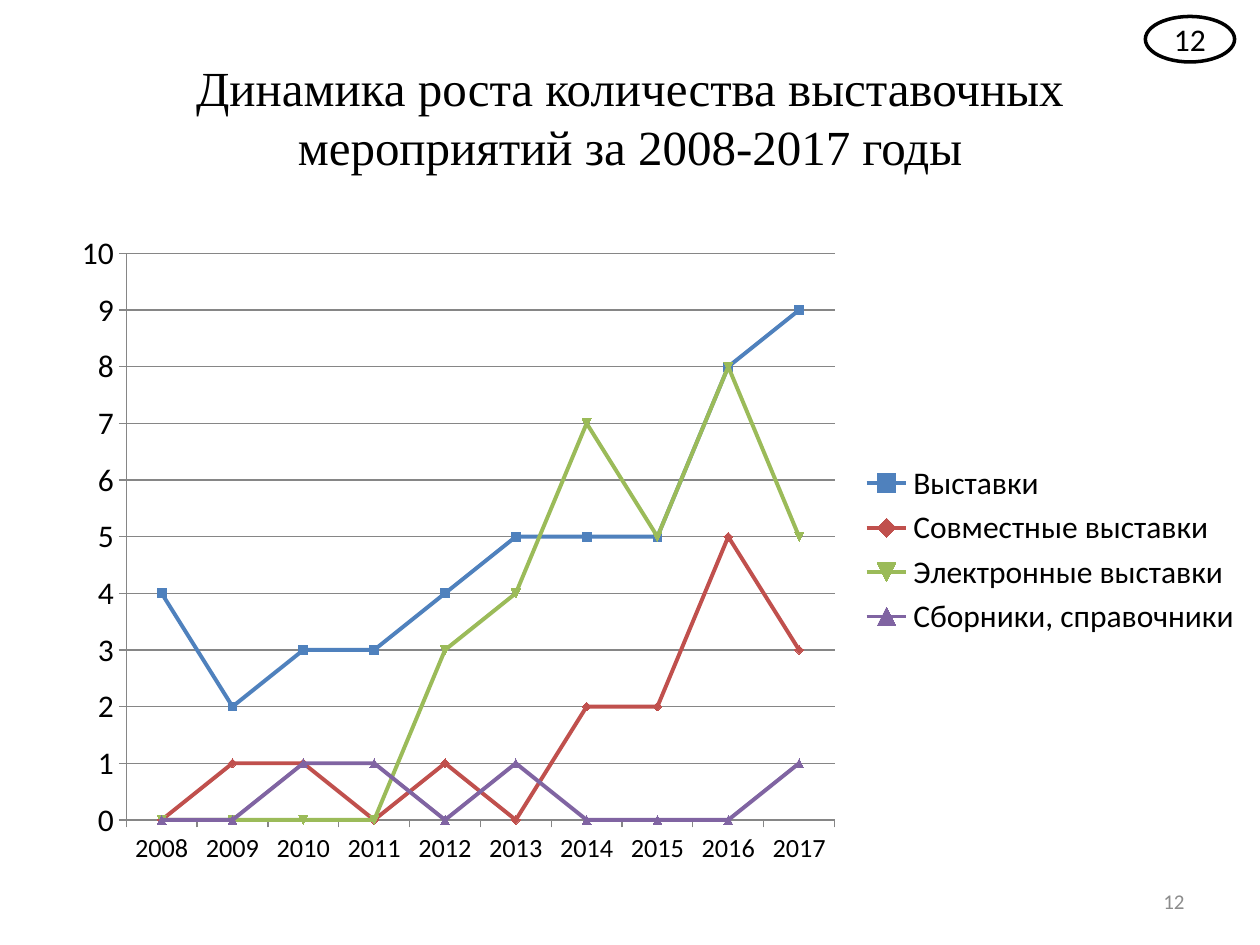
from lxml import etree
from pptx import Presentation
from pptx.chart.data import CategoryChartData
from pptx.dml.color import RGBColor
from pptx.enum.chart import XL_CHART_TYPE, XL_LEGEND_POSITION, XL_TICK_MARK
from pptx.enum.shapes import MSO_SHAPE
from pptx.enum.text import MSO_ANCHOR, PP_ALIGN
from pptx.oxml.ns import qn
from pptx.util import Pt

LINES = XL_CHART_TYPE.LINE_MARKERS
RIGHT_KEY = XL_LEGEND_POSITION.RIGHT
TICK_OUT = XL_TICK_MARK.OUTSIDE
OVAL = MSO_SHAPE.OVAL
MIDDLE = MSO_ANCHOR.MIDDLE
CENTER, RIGHT = PP_ALIGN.CENTER, PP_ALIGN.RIGHT

TITLE = "Динамика роста количества выставочных мероприятий за 2008-2017 годы"
PAGE = "12"
YEARS = [str(year) for year in range(2008, 2018)]
SERIES = [
    ("Выставки", (4, 2, 3, 3, 4, 5, 5, 5, 8, 9), "4F81BD"),
    ("Совместные выставки", (0, 1, 1, 0, 1, 0, 2, 2, 5, 3), "C0504D"),
    ("Электронные выставки", (0, 0, 0, 0, 3, 4, 7, 5, 8, 5), "9BBB59"),
    ("Сборники, справочники", (0, 0, 1, 1, 0, 1, 0, 0, 0, 1), "8064A2"),
]
BOXES = {
    "title": (36, 21.6, 648, 90),
    "chart": (31, 126, 686, 376.5),
    "page": (516, 500.5, 168, 28.8),
    "badge": (654.5, 9.4, 51, 26),
}
PLOT = {"x": 0.06, "y": 0.05, "w": 0.59, "h": 0.86}
THEME = {
    "head": "Times New Roman", "body": "Calibri",
    "ink": "000000", "paper": "FFFFFF", "gray": "8C8C8C", "axis": "868686",
    "big": 28, "text": 18, "year": 15, "small": 12,
}


def color(name):
    return RGBColor.from_string(THEME.get(name, name))


def place(name):
    return [Pt(side) for side in BOXES[name]]


def write(shape, text, size="text", face="body", ink="ink", align=CENTER):
    frame = shape.text_frame
    frame.word_wrap = True
    frame.vertical_anchor = MIDDLE
    part = frame.paragraphs[0]
    part.alignment = align
    run = part.add_run()
    run.text = text
    run.font.name = THEME[face]
    run.font.size = Pt(THEME[size])
    run.font.color.rgb = color(ink)


def set_plot(chart):
    area = chart._chartSpace.find(".//" + qn("c:plotArea"))
    old = area.find(qn("c:layout"))
    if old is not None:
        area.remove(old)
    layout = etree.Element(qn("c:layout"))
    area.insert(0, layout)
    manual = etree.SubElement(layout, qn("c:manualLayout"))
    rules = [("layoutTarget", "inner"), ("xMode", "edge"), ("yMode", "edge")]
    for tag, val in rules + list(PLOT.items()):
        etree.SubElement(manual, qn("c:" + tag)).set("val", str(val))


def draw_chart(slide):
    data = CategoryChartData()
    data.categories = YEARS
    for name, vals, _ in SERIES:
        data.add_series(name, vals)
    chart = slide.shapes.add_chart(LINES, *place("chart"), data).chart
    chart.has_title = False
    chart.font.name = THEME["body"]
    chart.font.size = Pt(THEME["text"])
    chart.font.color.rgb = color("ink")
    chart.has_legend = True
    chart.legend.position = RIGHT_KEY
    chart.legend.include_in_layout = False
    set_plot(chart)

    years, counts = chart.category_axis, chart.value_axis
    years.tick_labels.font.size = Pt(THEME["year"])
    counts.minimum_scale, counts.maximum_scale, counts.major_unit = 0, 10, 1
    counts.has_major_gridlines = True
    for axis in (years, counts):
        axis.major_tick_mark = TICK_OUT
    for item in (years, counts, counts.major_gridlines):
        item.format.line.color.rgb = color("axis")
        item.format.line.width = Pt(0.75)

    chart.plots[0].vary_by_categories = False
    for line, (_, _, tint) in zip(chart.plots[0].series, SERIES):
        line.smooth = False
        line.format.line.color.rgb = color(tint)
        line.format.line.width = Pt(2.25)
        mark = line.marker
        mark.size = 5
        mark.format.fill.solid()
        mark.format.fill.fore_color.rgb = color(tint)
        mark.format.line.color.rgb = color(tint)


def draw_badge(slide):
    badge = slide.shapes.add_shape(OVAL, *place("badge"))
    badge.shadow.inherit = False
    badge.fill.solid()
    badge.fill.fore_color.rgb = color("paper")
    badge.line.color.rgb = color("ink")
    badge.line.width = Pt(2)
    frame = badge.text_frame
    frame.margin_left = frame.margin_right = 0
    frame.margin_top = frame.margin_bottom = 0
    write(badge, PAGE)


def main():
    deck = Presentation()
    deck.slide_width, deck.slide_height = Pt(720), Pt(540)
    slide = deck.slides.add_slide(deck.slide_layouts[6])
    title = slide.shapes.add_textbox(*place("title"))
    write(title, TITLE, size="big", face="head")
    draw_chart(slide)
    page = slide.shapes.add_textbox(*place("page"))
    write(page, PAGE, size="small", ink="gray", align=RIGHT)
    draw_badge(slide)
    deck.save("out.pptx")


if __name__ == "__main__":
    main()
